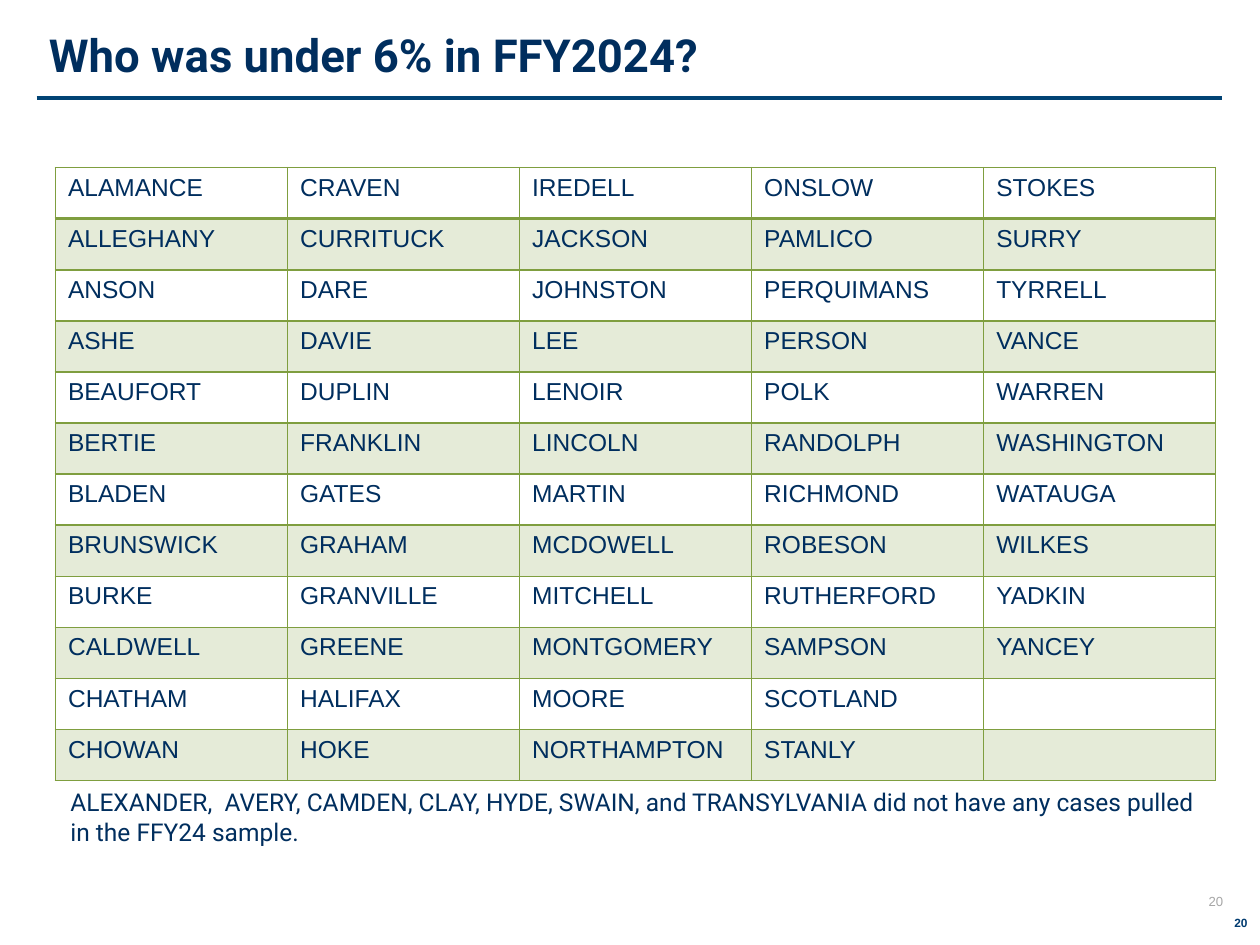
from itertools import zip_longest

from lxml.etree import SubElement
from pptx import Presentation
from pptx.dml.color import RGBColor
from pptx.enum.shapes import MSO_CONNECTOR
from pptx.enum.text import MSO_ANCHOR, PP_ALIGN
from pptx.oxml.ns import qn
from pptx.util import Inches, Pt

NAVY = RGBColor(0x00, 0x2E, 0x5E)
RULE_BLUE = RGBColor(0x01, 0x43, 0x74)
NUMBER_BLUE = RGBColor(0x00, 0x3B, 0x70)
GREY = RGBColor(0xA6, 0xA6, 0xA6)
GREEN = RGBColor(0x7F, 0x9E, 0x3F)
WHITE = RGBColor(0xFF, 0xFF, 0xFF)

COUNTY_COLUMNS = [
    "ALAMANCE ALLEGHANY ANSON ASHE BEAUFORT BERTIE BLADEN BRUNSWICK BURKE "
    "CALDWELL CHATHAM CHOWAN",
    "CRAVEN CURRITUCK DARE DAVIE DUPLIN FRANKLIN GATES GRAHAM GRANVILLE "
    "GREENE HALIFAX HOKE",
    "IREDELL JACKSON JOHNSTON LEE LENOIR LINCOLN MARTIN MCDOWELL MITCHELL "
    "MONTGOMERY MOORE NORTHAMPTON",
    "ONSLOW PAMLICO PERQUIMANS PERSON POLK RANDOLPH RICHMOND ROBESON "
    "RUTHERFORD SAMPSON SCOTLAND STANLY",
    "STOKES SURRY TYRRELL VANCE WARREN WASHINGTON WATAUGA WILKES YADKIN YANCEY",
]
NOTE = ("ALEXANDER,  AVERY, CAMDEN, CLAY, HYDE, SWAIN, and TRANSYLVANIA "
        "did not have any cases pulled in the FFY24 sample.")


class CountyPage:
    """A slide on a grid of 100 columns by 75 rows, with its text style."""

    def __init__(self, deck):
        self.column = deck.slide_width / 100
        self.row = deck.slide_height / 75
        self.page = deck.slides.add_slide(deck.slide_layouts[6])
        self.page.background.fill.solid()
        self.page.background.fill.fore_color.rgb = WHITE
        self.style = {"name": "Arial", "size": Pt(14), "bold": False}

    def place(self, left, top, right, bottom):
        """Turn grid lengths into EMU, across and down in turn."""
        return (round(left * self.column), round(top * self.row),
                round(right * self.column), round(bottom * self.row))

    def add_span(self, para, words, color=NAVY, **changes):
        span = para.add_run()
        span.text = words
        for name, value in {**self.style, **changes}.items():
            setattr(span.font, name, value)
        span.font.color.rgb = color

    def text(self, area, words, align=PP_ALIGN.LEFT, frame_format=None,
             spacing=None, **font):
        frame = self.page.shapes.add_textbox(*self.place(*area)).text_frame
        for name, value in {"word_wrap": True, **(frame_format or {})}.items():
            setattr(frame, name, value)
        para = frame.paragraphs[0]
        para.alignment, para.line_spacing = align, spacing
        self.add_span(para, words, **font)

    def rule(self, start, end, color, width):
        line = self.page.shapes.add_connector(
            MSO_CONNECTOR.STRAIGHT, *self.place(*start, *end))
        line.line.color.rgb, line.line.width = color, Pt(width)
        SubElement(line._element.spPr, qn("a:effectLst"))

    def border(self, cell, widths):
        """Draw the cell's sides in green; widths maps L, R, T, B to points."""
        properties = cell._tc.get_or_add_tcPr()
        for side, width in widths.items():
            edge = SubElement(properties, qn(f"a:ln{side}"), w=str(Pt(width)))
            fill = SubElement(edge, qn("a:solidFill"))
            SubElement(fill, qn("a:srgbClr"), val=str(GREEN))

    def tint(self, cell):
        """Fill the cell with green at 20% opacity."""
        cell.fill.solid()
        cell.fill.fore_color.rgb = GREEN
        color = cell._tc.tcPr.find(f"{qn('a:solidFill')}/{qn('a:srgbClr')}")
        SubElement(color, qn("a:alpha"), val="20000")

    def table(self, area, rows):
        table = self.page.shapes.add_table(
            len(rows), len(rows[0]), *self.place(*area)).table
        table.first_row = table.horz_banding = False
        for index, names in enumerate(rows):
            for cell, name in zip(table.rows[index].cells, names):
                self.border(cell, {"L": 1, "R": 1, "T": 2 if index == 1 else 1,
                                   "B": 2 if index == 0 else 1})
                if index % 2:
                    self.tint(cell)
                else:
                    cell.fill.background()
                if name:
                    self.add_span(cell.text_frame.paragraphs[0], name)


def main():
    deck = Presentation()
    deck.slide_width, deck.slide_height = Inches(10), Inches(7.5)
    page = CountyPage(deck)
    middle = {"vertical_anchor": MSO_ANCHOR.MIDDLE}
    no_margins = dict.fromkeys(
        ("margin_left", "margin_top", "margin_right", "margin_bottom"), 0)

    page.text((94.8, 70.9, 3.4, 1.3), "20", PP_ALIGN.CENTER,
              {**middle, **no_margins}, size=Pt(7.5), color=GREY)
    page.rule((2.9, 7.8), (97, 7.8), RULE_BLUE, 2.25)
    page.text((2.9, 1.3, 94.3, 6.5), "Who was under 6% in FFY2024?",
              frame_format=middle, spacing=0.9,
              name="Roboto", size=Pt(26), bold=True)
    page.text((93.8, 72.2, 6.2, 3.1), "20", PP_ALIGN.RIGHT,
              size=Pt(6.8), bold=True, color=NUMBER_BLUE)
    counties = [column.split() for column in COUNTY_COLUMNS]
    page.table((4.4, 13.3, 92.1, 48.7),
               list(zip_longest(*counties, fillvalue="")))
    page.text((4.6, 62, 92.1, 5.7), NOTE, name="Roboto")
    deck.save("out.pptx")


if __name__ == "__main__":
    main()
